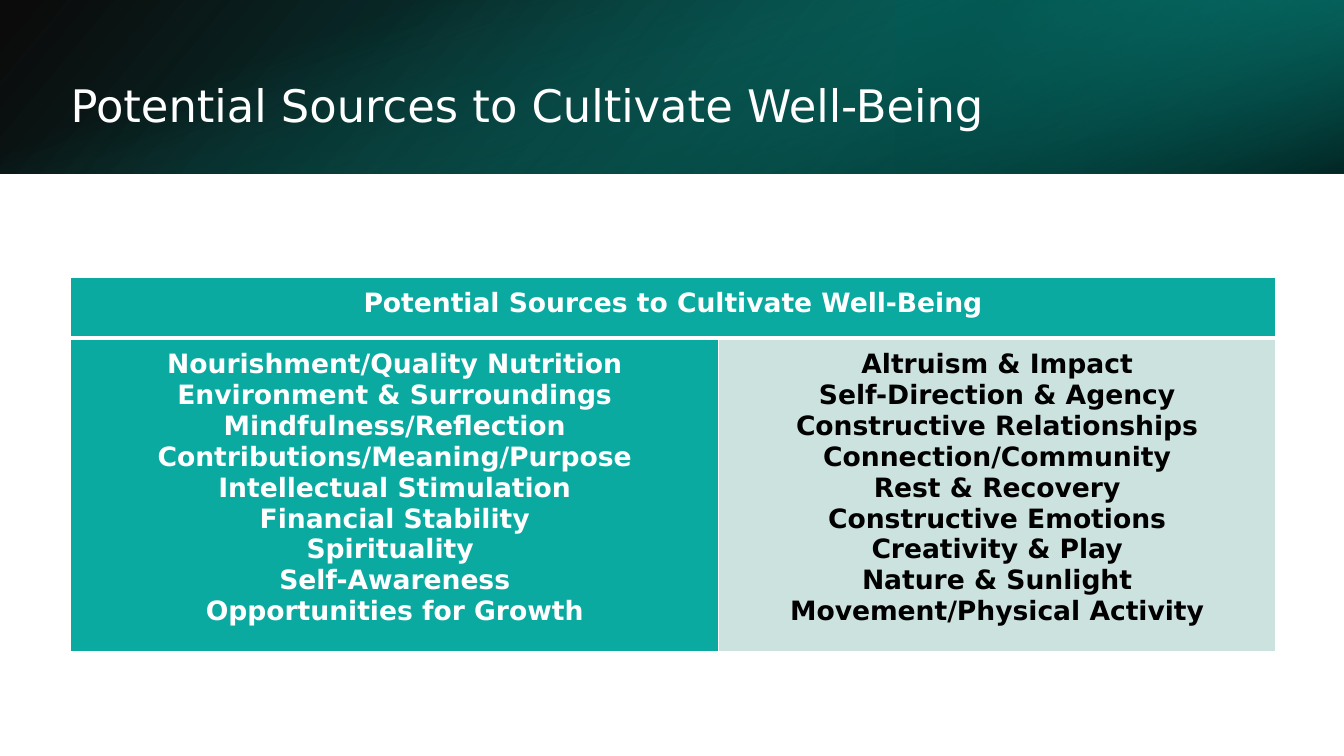
from lxml import etree
from pptx import Presentation
from pptx.dml.color import RGBColor
from pptx.enum.shapes import MSO_SHAPE as Shape
from pptx.enum.text import MSO_ANCHOR as Anchor, MSO_AUTO_SIZE as AutoSize, PP_ALIGN as Align
from pptx.oxml import parse_xml
from pptx.oxml.ns import nsdecls, qn
from pptx.util import Inches, Pt

FONT = "DejaVu Sans"
WHITE = RGBColor(0xFF, 0xFF, 0xFF)
BLACK = RGBColor(0x00, 0x00, 0x00)
TEAL = RGBColor(0x0A, 0xAA, 0xA0)
MID_TEAL = RGBColor(0x08, 0x7F, 0x78)
DARK_TEAL = RGBColor(0x05, 0x55, 0x50)
PALE_TEAL = RGBColor(0xCC, 0xE2, 0xDF)

TITLE = "Potential Sources to Cultivate Well-Being"
LEFT_SOURCES = [
    "Nourishment/Quality Nutrition", "Environment & Surroundings",
    "Mindfulness/Reflection", "Contributions/Meaning/Purpose",
    "Intellectual Stimulation", "Financial Stability", "Spirituality ",
    "Self-Awareness", "Opportunities for Growth",
]
RIGHT_SOURCES = [
    "Altruism & Impact", "Self-Direction & Agency",
    "Constructive Relationships", "Connection/Community", "Rest & Recovery",
    "Constructive Emotions", "Creativity & Play", "Nature & Sunlight",
    "Movement/Physical Activity",
]


def style_span(span, size, color, bold=False):
    span.font.name = FONT
    span.font.size = Pt(size)
    span.font.bold = bold
    span.font.color.rgb = color


def add_gradient(slide, box, stops, angle, rotation=0, flip=False):
    """Add a rectangle; each stop is (position %, colour, opacity %)."""
    panel = slide.shapes.add_shape(Shape.RECTANGLE, *map(Inches, box))
    panel.shadow.inherit = False
    panel.line.fill.background()
    panel.rotation = rotation
    properties = panel._element.spPr
    if flip:
        properties.find(qn("a:xfrm")).set("flipH", "1")
    stop_xml = "".join(
        f'<a:gs pos="{position * 1000}"><a:srgbClr val="{color}">'
        f'<a:alpha val="{opacity * 1000}"/></a:srgbClr></a:gs>'
        for position, color, opacity in stops)
    properties.find(qn("a:prstGeom")).addnext(parse_xml(
        f'<a:gradFill {nsdecls("a")} rotWithShape="1"><a:gsLst>{stop_xml}</a:gsLst>'
        f'<a:lin ang="{angle * 60000}" scaled="0"/></a:gradFill>'))


def add_banner(slide, left, top, width, height):
    # Base sweep from black to teal
    add_gradient(slide, (left, top, width, height),
                 [(0, BLACK, 96), (100, MID_TEAL, 100)], 140, flip=True)
    # Highlight over the right third
    third = width / 3
    add_gradient(slide, (left + width - third, top, third, height),
                 [(19, DARK_TEAL, 68), (100, TEAL, 79)], 320, rotation=180, flip=True)
    # Shade on its side, turned to cover the whole banner
    shift = (width - height) / 2
    add_gradient(slide, (left + shift, top - shift, height, width),
                 [(23, TEAL, 0), (99, BLACK, 74)], 340, rotation=90)


def add_title(slide, left, top, width, height):
    title = slide.shapes.title
    title.left, title.top, title.width, title.height = map(
        Inches, (left, top, width, height))
    frame = title.text_frame
    frame.word_wrap = True
    frame.auto_size = AutoSize.SHAPE_TO_FIT_TEXT
    frame.vertical_anchor = Anchor.TOP
    para = frame.paragraphs[0]
    para.alignment = Align.LEFT
    span = para.add_run()
    span.text = TITLE
    style_span(span, 32, WHITE)
    # Bring the title in front of the banner
    title._element.getparent().append(title._element)


def set_borders(cell, bottom_width=1):
    properties = cell._tc.get_or_add_tcPr()
    for side, width in (("L", 1), ("R", 1), ("T", 1), ("B", bottom_width)):
        line = etree.SubElement(properties, qn(f"a:ln{side}"), w=str(Pt(width)))
        fill = etree.SubElement(line, qn("a:solidFill"))
        etree.SubElement(fill, qn("a:srgbClr"), val=str(WHITE))


def fill_cell(cell, lines, fill_color, text_color):
    cell.fill.solid()
    cell.fill.fore_color.rgb = fill_color
    cell.margin_left = cell.margin_right = Inches(0.11)
    cell.margin_top = cell.margin_bottom = Inches(0.11)
    frame = cell.text_frame
    for index, line in enumerate(lines):
        para = frame.add_paragraph() if index else frame.paragraphs[0]
        para.alignment = Align.CENTER
        span = para.add_run()
        span.text = line
        style_span(span, 19, text_color, bold=True)


def add_sources_table(slide, left, top, width, height):
    table = slide.shapes.add_table(
        2, 2, *map(Inches, (left, top, width, height))).table
    table.columns[0].width = Inches(6.43)
    table.columns[1].width = Inches(width - 6.43)
    table.rows[0].height = Inches(0.6)
    table.rows[1].height = Inches(height - 0.6)
    for column in range(2):
        set_borders(table.cell(0, column), bottom_width=3)
        set_borders(table.cell(1, column))
    # Heading across both columns
    table.cell(0, 0).merge(table.cell(0, 1))
    fill_cell(table.cell(0, 0), [TITLE], TEAL, WHITE)
    # Two lists of sources
    fill_cell(table.cell(1, 0), LEFT_SOURCES, TEAL, WHITE)
    fill_cell(table.cell(1, 1), RIGHT_SOURCES, PALE_TEAL, BLACK)


def main():
    deck = Presentation()
    deck.slide_width, deck.slide_height = Inches(13.33), Inches(7.5)
    page = deck.slides.add_slide(deck.slide_layouts[5])
    page.background.fill.solid()
    page.background.fill.fore_color.rgb = WHITE
    add_banner(page, 0, 0, 13.33, 1.72)
    add_sources_table(page, 0.7, 2.75, 11.95, 3.71)
    add_title(page, 0.6, 0.72, 12.73, 0.64)
    deck.save("out.pptx")


if __name__ == "__main__":
    main()
